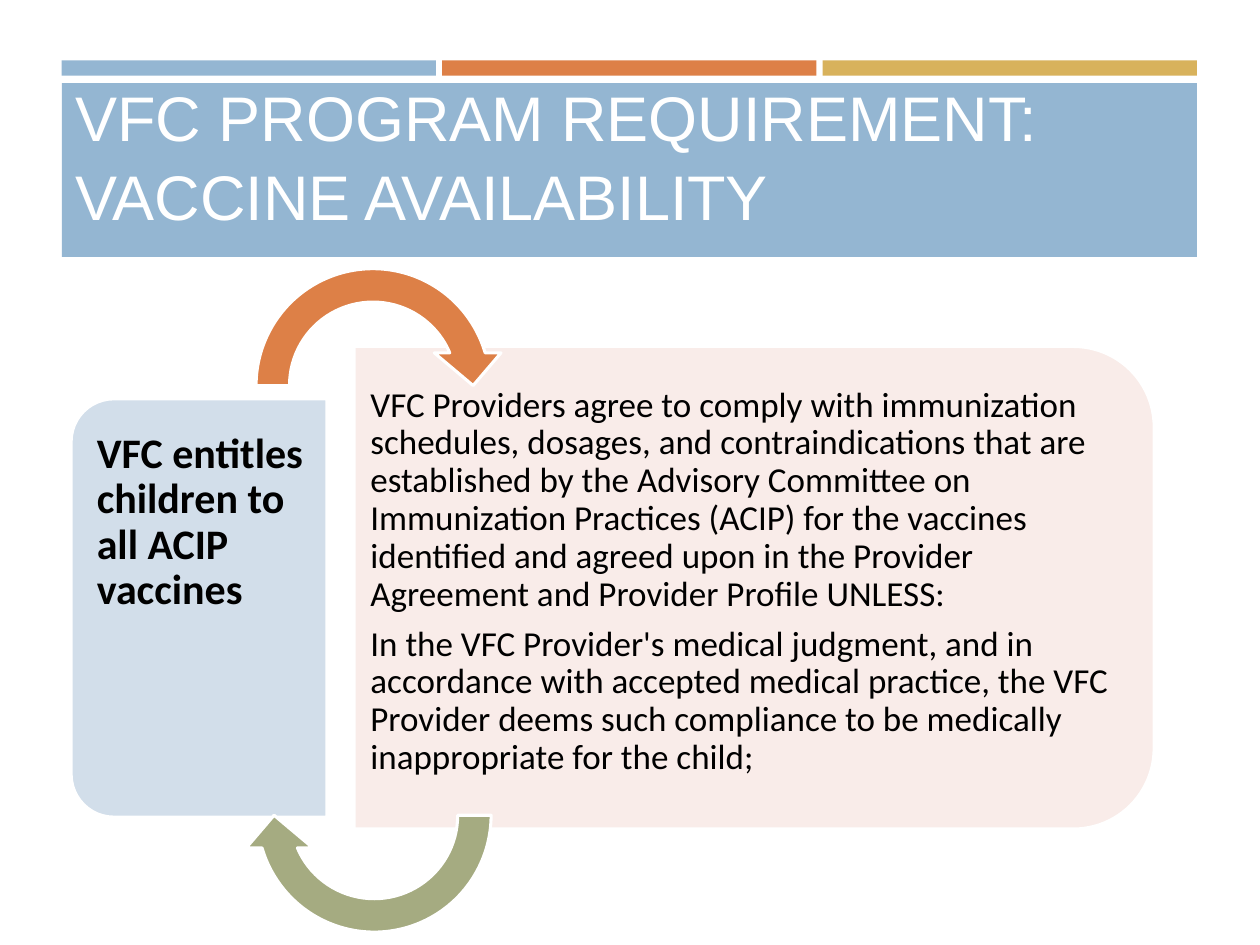
from pptx import Presentation
from pptx.dml.color import RGBColor
from pptx.enum.shapes import MSO_SHAPE
from pptx.enum.text import MSO_ANCHOR
from pptx.util import Inches, Pt

RECTANGLE = MSO_SHAPE.RECTANGLE
PANEL = MSO_SHAPE.ROUND_2_SAME_RECTANGLE
ARROW = MSO_SHAPE.CIRCULAR_ARROW
TOP, BOTTOM = MSO_ANCHOR.TOP, MSO_ANCHOR.BOTTOM
BLUE, ORANGE, GOLD, GREEN = "94B6D2", "DD8047", "D8B25C", "A5AB81"
WHITE, BLACK = "FFFFFF", "000000"


def color(value):
    return RGBColor.from_string(value)


def add_filled(kind, box, fill, outlined=False, rotation=0, adjustments=()):
    shape = slide.shapes.add_shape(kind, *map(Inches, box))
    shape.shadow.inherit = False
    shape.fill.solid()
    shape.fill.fore_color.rgb = color(fill)
    if outlined:
        shape.line.color.rgb = color(WHITE)
        shape.line.width = Pt(1.75)
    else:
        shape.line.fill.background()
    shape.rotation = rotation
    for index, value in enumerate(adjustments):
        shape.adjustments[index] = value


presentation = Presentation()
presentation.slide_width = Inches(10)
presentation.slide_height = Inches(7.5)
slide = presentation.slides.add_slide(presentation.slide_layouts[6])

# Accent strips and title band
for index, fill in enumerate((BLUE, ORANGE, GOLD)):
    add_filled(RECTANGLE, (0.49 + index * 3.02, 0.48, 2.97, 0.12), fill)
add_filled(RECTANGLE, (0.49, 0.66, 9.01, 1.38), BLUE)

# Panels with two rounded corners, turned outwards
add_filled(PANEL, (-0.08, 3.81, 3.32, 2.03), "D2DEEA", True, 270, (0.167, 0))
add_filled(PANEL, (4.07, 1.49, 3.83, 6.35), "F9ECE9", True, 90, (0.167, 0))

# Circular arrows linking the panels
arrow_shape = (0.125, 11.423, 204.577, 108, 0.125)
add_filled(ARROW, (1.9, 2, 2.12, 2.12), ORANGE, True, 0, arrow_shape)
add_filled(ARROW, (1.91, 5.41, 2.12, 2.12), GREEN, True, 180, arrow_shape)

# Texts: box, insets (left, top, right, bottom), anchor, font, size, bold,
# colour, line spacing, space after, paragraphs
texts = [
    ((0.5, 0.82, 9, 1.08), (0.1, 0.05, 0.1, 0.05), BOTTOM,
     "Arial", 36, False, WHITE, 1.05, 0,
     ["VFC PROGRAM REQUIREMENT:\nVACCINE AVAILABILITY"]),
    ((0.67, 3.26, 1.93, 3.12), (0.1, 0.17, 0.15, 0.17), TOP,
     "Calibri", 24, True, BLACK, 0.9, 8.4,
     ["VFC entitles children to all ACIP vaccines"]),
    ((2.82, 2.93, 6.16, 3.46), (0.12, 0.14, 0.08, 0.14), TOP,
     "Calibri", 20, False, BLACK, 0.9, 7,
     ["VFC Providers agree to comply with immunization schedules, dosages, "
      "and contraindications that are established by the Advisory Committee "
      "on Immunization Practices (ACIP) for the vaccines identified and "
      "agreed upon in the Provider Agreement and Provider Profile UNLESS:",
      "In the VFC Provider's medical judgment, and in accordance with "
      "accepted medical practice, the VFC Provider deems such compliance to "
      "be medically inappropriate for the child;"]),
]
for (box, insets, anchor, font, size, bold, text_color,
     line_spacing, space_after, paragraphs) in texts:
    frame = slide.shapes.add_textbox(*map(Inches, box)).text_frame
    frame.word_wrap = True
    frame.vertical_anchor = anchor
    (frame.margin_left, frame.margin_top,
     frame.margin_right, frame.margin_bottom) = map(Inches, insets)
    for index, text in enumerate(paragraphs):
        paragraph = frame.add_paragraph() if index else frame.paragraphs[0]
        paragraph.line_spacing = line_spacing
        paragraph.space_after = Pt(space_after)
        for line_number, line in enumerate(text.split("\n")):
            if line_number:
                paragraph.add_line_break()
            run = paragraph.add_run()
            run.text = line
            run.font.name = font
            run.font.size = Pt(size)
            run.font.bold = bold
            run.font.color.rgb = color(text_color)

presentation.save("out.pptx")
